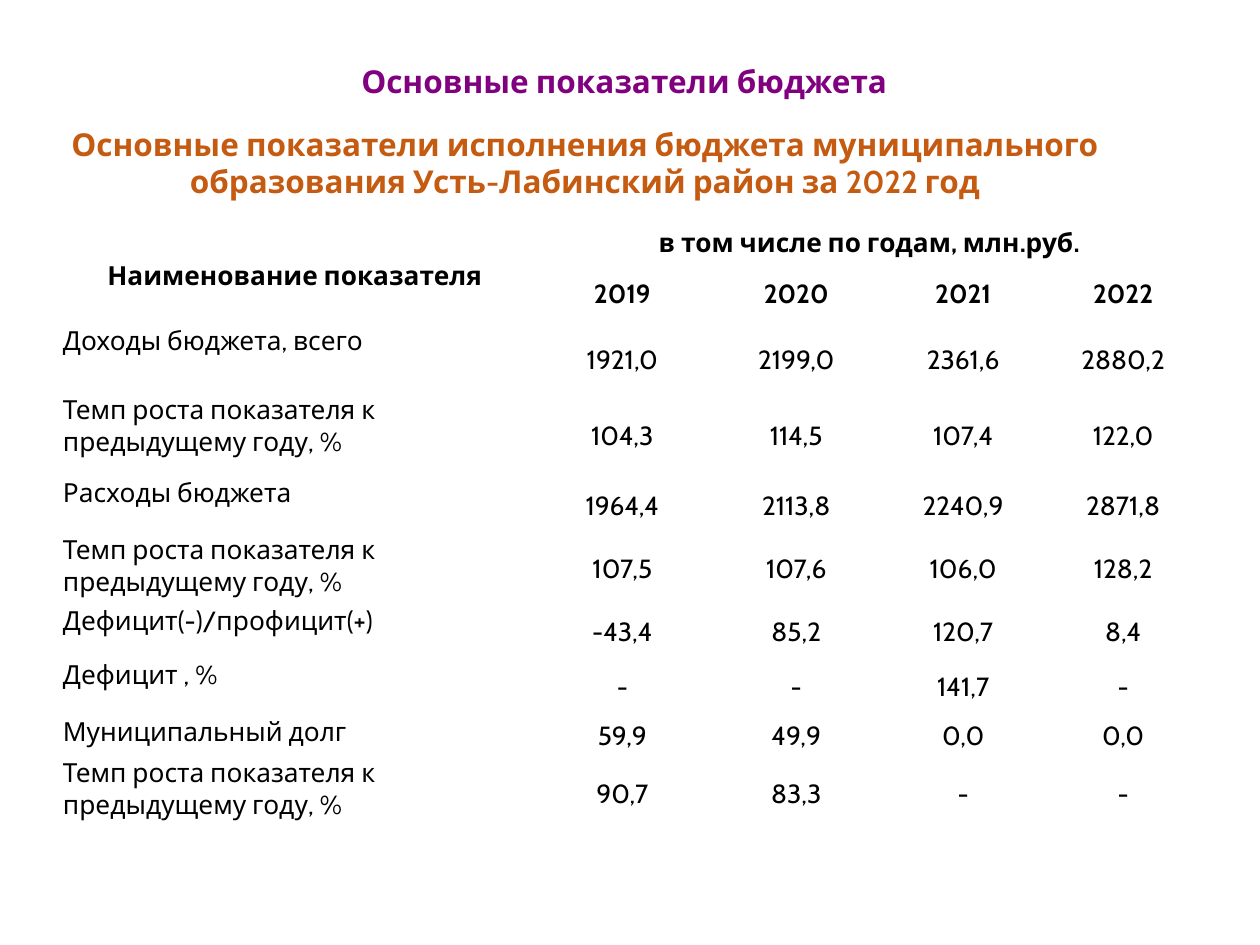
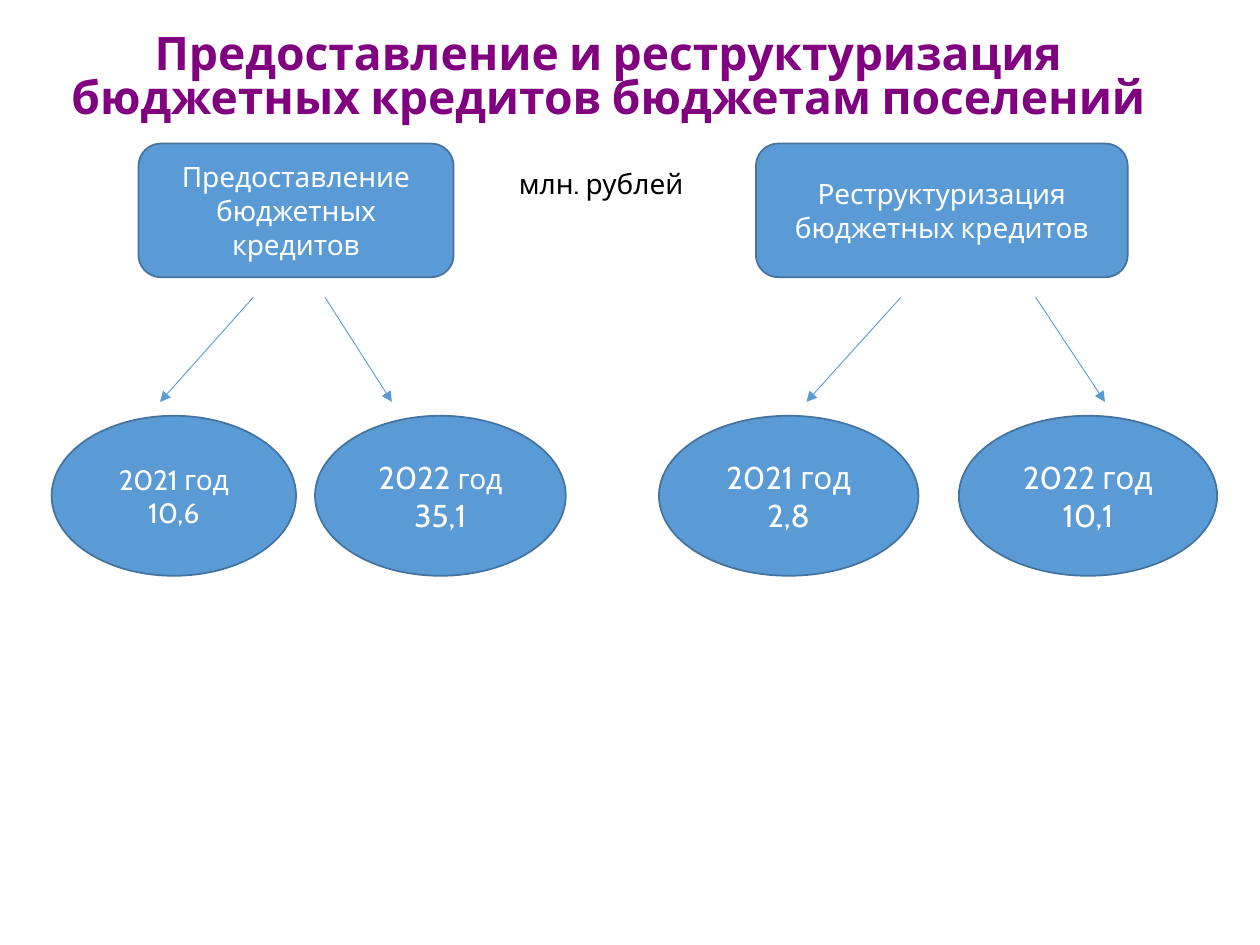
from lxml.etree import SubElement
from pptx import Presentation
from pptx.dml.color import RGBColor
from pptx.enum.shapes import MSO_CONNECTOR, MSO_SHAPE
from pptx.enum.text import MSO_ANCHOR as ANCHOR, PP_ALIGN as ALIGN
from pptx.oxml.ns import qn
from pptx.util import Inches, Pt

FONT = "Cabin"
COLORS = {
    "title": "800080",
    "subtitle": "C55A11",
    "text": "000000",
    "light": "FFFFFF",
    "fill": "5B9BD5",
    "outline": "43739E",
}
GROWTH = "Темп роста показателя к предыдущему году, %"
YEARS = ["2019", "2020", "2021", "2022"]
INDICATORS = [
    ("Доходы бюджета, всего", "1921,0", "2199,0", "2361,6", "2880,2"),
    (GROWTH, "104,3", "114,5", "107,4", "122,0"),
    ("Расходы бюджета", "1964,4", "2113,8", "2240,9", "2871,8"),
    (GROWTH, "107,5", "107,6", "106,0", "128,2"),
    ("Дефицит(-)/профицит(+)", "-43,4", "85,2", "120,7", "8,4"),
    ("Дефицит , %", "-", "-", "141,7", "-"),
    ("Муниципальный долг", "59,9", "49,9", "0,0", "0,0"),
    (GROWTH, "90,7", "83,3", "-", "-"),
]
COL_WIDTHS = [3.82, 1.38, 1.38, 1.27, 1.27]
ROW_HEIGHTS = [0.28, 0.5, 0.55, 0.66, 0.45, 0.56, 0.43, 0.45, 0.33, 0.59]
BOXES = [
    ("Предоставление бюджетных кредитов", 1.1, 2.5),
    ("Реструктуризация бюджетных кредитов", 6, 2.95),
]
ARROWS = [(2.01, 1.27), (2.58, 3.11), (7.15, 6.4), (8.22, 8.77)]
OVALS = [
    (0.41, 1.94, [[("2021 год", 16)], [("10,6", 16)]]),
    (2.5, 1.99, [[("2022 ", 18), ("год", 16)], [("35,1", 18)]]),
    (5.23, 2.06, [[("2021 год", 18)], [("2,8", 18)]]),
    (7.61, 2.05, [[("2022 год", 18)], [("10,1", 18)]]),
]


def rgb(name):
    """Return the named palette colour."""
    return RGBColor.from_string(COLORS[name])


def style_run(r, size, color, bold=False):
    """Apply the common font to a run."""
    r.font.name = FONT
    r.font.size = Pt(size)
    r.font.bold = bold
    r.font.color.rgb = rgb(color)


def set_text(tf, text, size, color, bold=False, align=ALIGN.CENTER):
    """Write text into a frame and format every run."""
    tf.text = text
    for p in tf.paragraphs:
        p.alignment = align
        for r in p.runs:
            style_run(r, size, color, bold)


def add_label(s, box, text, size, color, bold=False, align=ALIGN.CENTER):
    """Add a wrapping text box and return its frame."""
    tf = s.shapes.add_textbox(*map(Inches, box)).text_frame
    tf.word_wrap = True
    set_text(tf, text, size, color, bold, align)
    return tf


def add_node(s, kind, box):
    """Add a filled shape and return its frame."""
    sp = s.shapes.add_shape(kind, *map(Inches, box))
    sp.shadow.inherit = False
    sp.fill.solid()
    sp.fill.fore_color.rgb = rgb("fill")
    sp.line.color.rgb = rgb("outline")
    sp.line.width = Pt(1)
    tf = sp.text_frame
    tf.word_wrap = True
    tf.vertical_anchor = ANCHOR.MIDDLE
    return tf


def add_oval(s, box, lines):
    """Add an ellipse whose lines hold runs of differing sizes."""
    tf = add_node(s, MSO_SHAPE.OVAL, box)
    for i, runs in enumerate(lines):
        p = tf.add_paragraph() if i else tf.paragraphs[0]
        p.alignment = ALIGN.CENTER
        for text, size in runs:
            r = p.add_run()
            r.text = text
            style_run(r, size, "light")


def add_arrow(s, x1, y1, x2, y2):
    """Add a thin straight arrow."""
    ends = map(Inches, (x1, y1, x2, y2))
    line = s.shapes.add_connector(MSO_CONNECTOR.STRAIGHT, *ends)
    line.line.color.rgb = rgb("fill")
    line.line.width = Pt(0.5)
    SubElement(line.line._get_or_add_ln(), qn("a:tailEnd"), type="triangle")
    SubElement(line._element.spPr, qn("a:effectLst"))


def set_cell(cell, text, bold=False, align=ALIGN.CENTER, anchor=ANCHOR.MIDDLE):
    """Fill in one table cell."""
    cell.margin_left = cell.margin_right = Inches(0.07)
    cell.margin_top = cell.margin_bottom = 0
    cell.vertical_anchor = anchor
    set_text(cell.text_frame, text, 15, "text", bold, align)


def add_indicator_table(s):
    """Add the table of budget indicators by year."""
    box = map(Inches, (0.43, 1.8, sum(COL_WIDTHS), sum(ROW_HEIGHTS)))
    table = s.shapes.add_table(len(ROW_HEIGHTS), len(COL_WIDTHS), *box).table
    table.first_row = table.horz_banding = False
    for col, width in zip(table.columns, COL_WIDTHS):
        col.width = Inches(width)
    for row, height in zip(table.rows, ROW_HEIGHTS):
        row.height = Inches(height)
    for cell in table.iter_cells():
        cell.fill.background()
        cell.margin_top = cell.margin_bottom = 0
    table.cell(0, 0).merge(table.cell(1, 0))
    table.cell(0, 1).merge(table.cell(0, 4))
    set_cell(table.cell(0, 0), "Наименование показателя", True)
    set_cell(table.cell(0, 1), "в том числе по годам, млн.руб.", True, anchor=ANCHOR.TOP)
    for j, year in enumerate(YEARS, 1):
        set_cell(table.cell(1, j), year, True)
    for i, (name, *values) in enumerate(INDICATORS, 2):
        set_cell(table.cell(i, 0), name, align=ALIGN.LEFT, anchor=ANCHOR.TOP)
        for j, value in enumerate(values, 1):
            set_cell(table.cell(i, j), value)


def build_indicators(s):
    """Build the slide of budget indicators."""
    add_label(s, (2.77, 0.44, 6.64, 0.42), "Основные показатели бюджета",
              18, "title", True, ALIGN.LEFT)
    add_label(s, (0.23, 0.94, 8.83, 0.71),
              "Основные показатели исполнения бюджета муниципального "
              "образования Усть-Лабинский район за 2022 год",
              18, "subtitle", True)
    add_indicator_table(s)


def build_credits(s):
    """Build the slide of budget credits."""
    tf = add_label(s, (0.29, 0.23, 9.08, 0.88),
                   "Предоставление и реструктуризация\n"
                   "бюджетных кредитов бюджетам поселений",
                   26.4, "title", True)
    for p in tf.paragraphs:
        p.line_spacing = 0.8
    for text, left, width in BOXES:
        tf = add_node(s, MSO_SHAPE.ROUNDED_RECTANGLE, (left, 1.14, width, 1.06))
        set_text(tf, text, 16, "light")
    for start, end in ARROWS:
        add_arrow(s, start, 2.36, end, 3.19)
    for left, width, lines in OVALS:
        add_oval(s, (left, 3.3, width, 1.27), lines)
    add_label(s, (4.02, 1.27, 1.6, 0.37), "млн. рублей", 16, "text", align=ALIGN.LEFT)


def main():
    """Build and save the presentation."""
    prs = Presentation()
    prs.slide_width, prs.slide_height = Inches(10), Inches(7.5)
    for build in (build_indicators, build_credits):
        build(prs.slides.add_slide(prs.slide_layouts[6]))
    prs.save("out.pptx")


if __name__ == "__main__":
    main()
